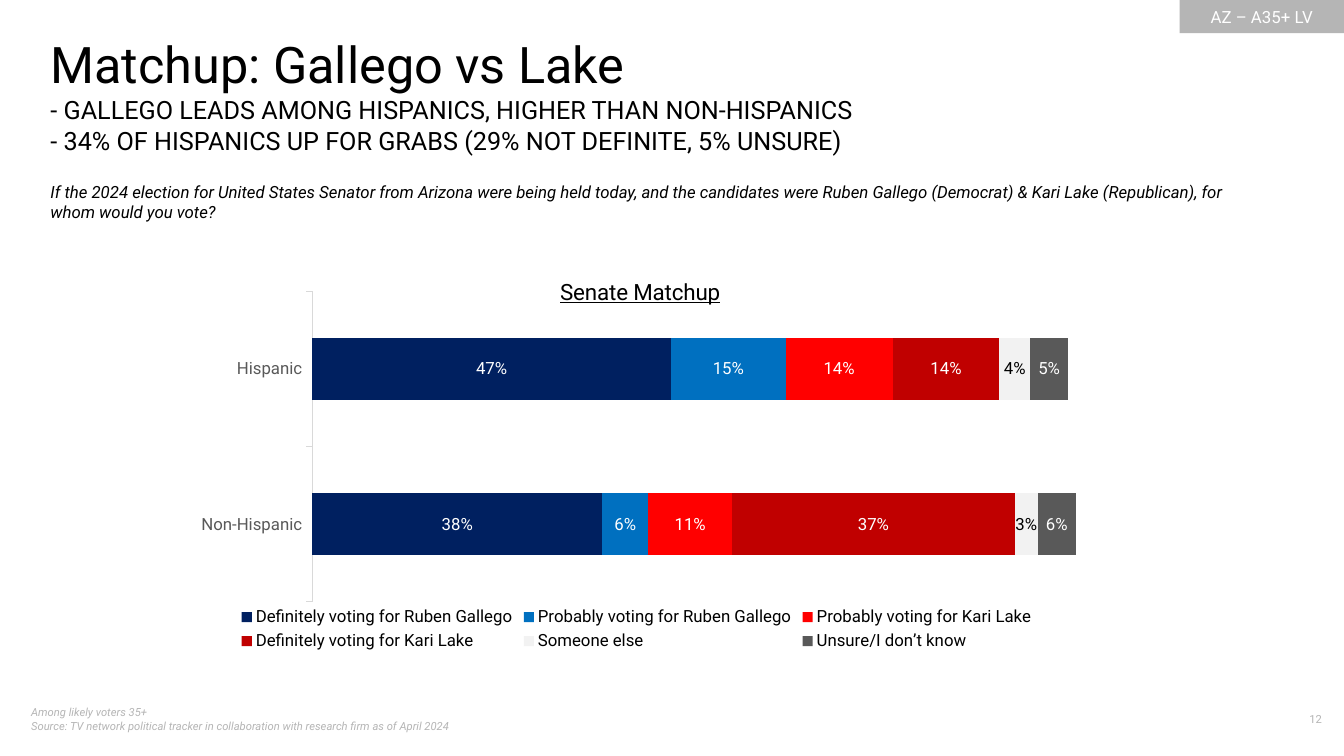
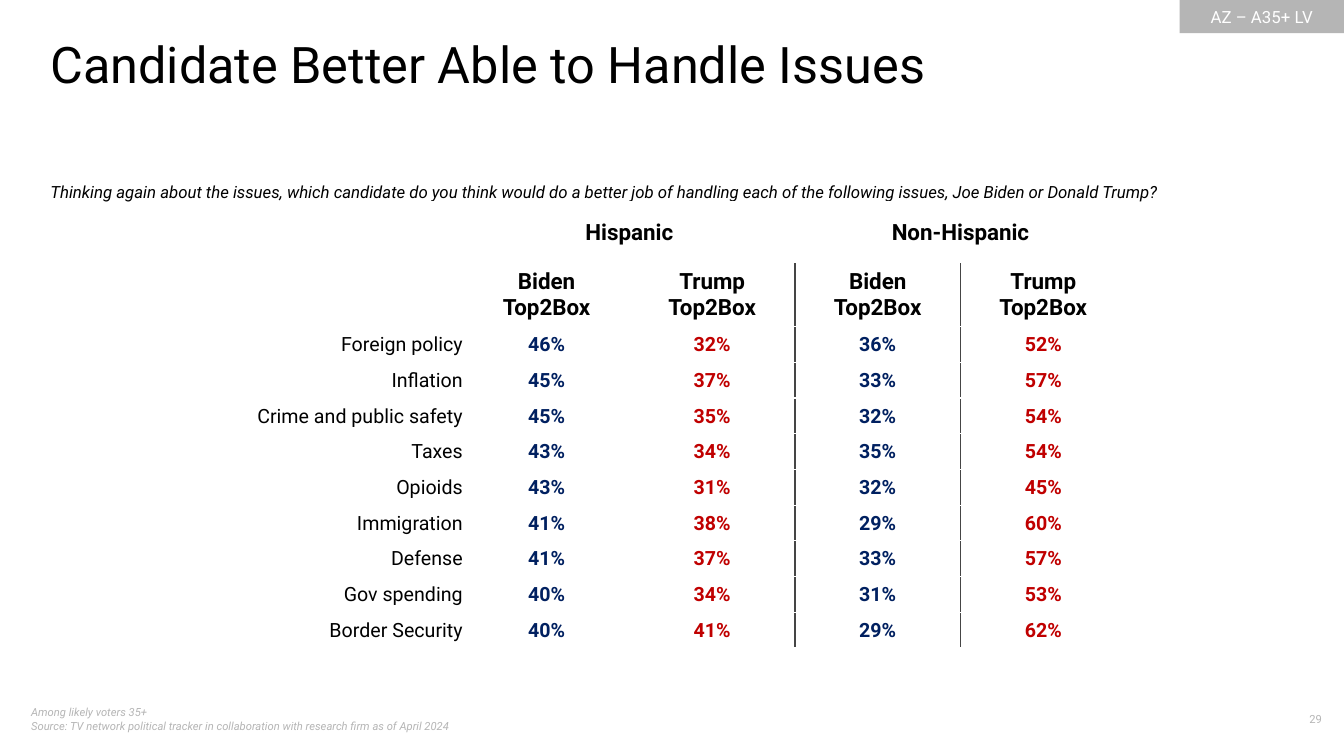
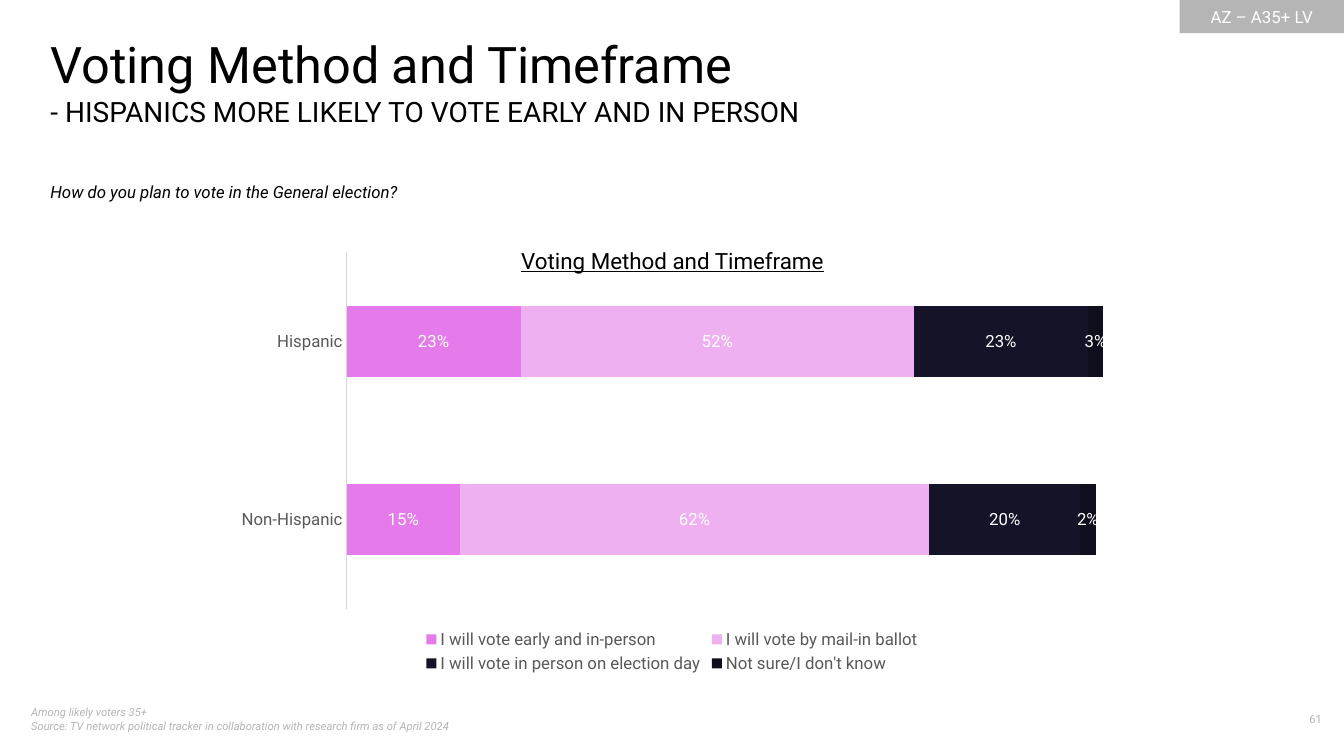
from dataclasses import dataclass
from typing import Optional

from lxml import etree
from pptx import Presentation
from pptx.chart.data import CategoryChartData
from pptx.dml.color import RGBColor
from pptx.enum.chart import XL_CHART_TYPE, XL_LABEL_POSITION, XL_LEGEND_POSITION, XL_TICK_MARK
from pptx.enum.shapes import MSO_SHAPE
from pptx.enum.text import MSO_ANCHOR, MSO_AUTO_SIZE, PP_ALIGN
from pptx.oxml.ns import qn
from pptx.util import Inches, Pt


@dataclass(frozen=True)
class Theme:
    font: str = "Roboto"
    # Colours
    ink: str = "000000"
    paper: str = "FFFFFF"
    muted: str = "B5B5B5"
    axis_text: str = "595959"
    axis_line: str = "D9D9D9"
    divider: str = "454545"
    navy: str = "002060"
    blue: str = "0070C0"
    red: str = "FF0000"
    dark_red: str = "C00000"
    pale: str = "F2F2F2"
    orchid: str = "E57BEA"
    light_orchid: str = "EFB0F2"
    midnight: str = "141327"
    near_black: str = "0F0E1D"
    # Type sizes
    title: int = 36
    heading: int = 16
    table: int = 14
    label: int = 12
    chart: int = 10
    small: int = 8


THEME = Theme()
BAND = "AZ – A35+ LV"
FOOTER = ("Among likely voters 35+\n"
          "Source: TV network political tracker in collaboration with research firm as of April 2024")
GROUPS = ("Hispanic", "Non-Hispanic")


@dataclass(frozen=True)
class Box:
    left: float
    top: float
    width: float
    height: float

    def lengths(self) -> tuple:
        return tuple(Inches(v) for v in (self.left, self.top, self.width, self.height))


@dataclass(frozen=True)
class Page:
    number: int
    title: str
    question: str
    findings: str = ""
    findings_size: int = 18


@dataclass(frozen=True)
class Answer:
    name: str
    shares: tuple
    color: str
    label_color: str = THEME.paper


@dataclass(frozen=True)
class StackedBars:
    box: Box
    plot: Box  # fractions of the chart area
    answers: tuple
    legend_color: str
    tick: XL_TICK_MARK
    title: Optional[str] = None


@dataclass(frozen=True)
class Issue:
    name: str
    shares: tuple  # Biden and Trump among Hispanics, then among Non-Hispanics


# Text helpers
def style_font(font, size: int, color: str, bold: bool = False,
               italic: bool = False, underline: bool = False) -> None:
    font.name, font.size = THEME.font, Pt(size)
    font.bold, font.italic, font.underline = bold, italic, underline
    font.color.rgb = RGBColor.from_string(color)


def write(frame, text: str, *, size: int, color: str = THEME.ink,
          align: PP_ALIGN = PP_ALIGN.LEFT, **font_format) -> None:
    frame.text = text
    for paragraph in frame.paragraphs:
        paragraph.alignment = align
        paragraph.space_before = Pt(0)
        for run in paragraph.runs:
            style_font(run.font, size, color, **font_format)


def fit_frame(frame, inset: Optional[float] = None, anchor: MSO_ANCHOR = MSO_ANCHOR.TOP) -> None:
    frame.word_wrap = True
    frame.auto_size = MSO_AUTO_SIZE.NONE
    frame.vertical_anchor = anchor
    if inset is not None:
        frame.margin_left = frame.margin_right = Inches(inset)
        frame.margin_top = frame.margin_bottom = Inches(inset)


def add_text(slide, box: Box, text: str, inset: Optional[float] = None,
             anchor: MSO_ANCHOR = MSO_ANCHOR.TOP, **text_format) -> None:
    frame = slide.shapes.add_textbox(*box.lengths()).text_frame
    fit_frame(frame, inset, anchor)
    write(frame, text, **text_format)


def fill_placeholder(placeholder, box: Box, text: str, size: int) -> None:
    placeholder.left, placeholder.top, placeholder.width, placeholder.height = box.lengths()
    fit_frame(placeholder.text_frame, inset=0)
    write(placeholder.text_frame, text, size=size)


# Shared page parts
def add_page(prs, page: Page):
    slide = prs.slides.add_slide(prs.slide_layouts[1])
    fill_placeholder(slide.shapes.title, Box(0.5, 0.33, 12, 0.61), page.title, THEME.title)
    body = slide.placeholders[1]
    if page.findings:
        fill_placeholder(body, Box(0.5, 0.94, 12, 0.7), page.findings, page.findings_size)
        for paragraph in body.text_frame.paragraphs:
            properties = paragraph._p.get_or_add_pPr()
            properties.set("marL", "0")
            properties.set("indent", "0")
            etree.SubElement(properties, qn("a:buNone"))
    else:
        body._element.getparent().remove(body._element)
    add_text(slide, Box(0.5, 1.8, 12, 0.4), page.question, inset=0, size=THEME.label, italic=True)

    band = slide.shapes.add_shape(MSO_SHAPE.RECTANGLE, *Box(11.7, 0, 1.63, 0.33).lengths())
    band.shadow.inherit = False
    band.fill.solid()
    band.fill.fore_color.rgb = RGBColor.from_string(THEME.muted)
    band.line.fill.background()
    fit_frame(band.text_frame, anchor=MSO_ANCHOR.MIDDLE)
    write(band.text_frame, BAND, size=THEME.label, color=THEME.paper, align=PP_ALIGN.CENTER)

    add_text(slide, Box(0.21, 6.95, 5.11, 0.4), FOOTER, size=THEME.small,
             color=THEME.muted, italic=True)
    add_text(slide, Box(12.33, 7.02, 0.88, 0.27), str(page.number), size=THEME.small,
             color=THEME.muted, align=PP_ALIGN.RIGHT)
    return slide


# Charts
def set_layout(parent, position: int, **settings) -> None:
    layout = parent.find(qn("c:layout"))
    if layout is None:
        layout = etree.Element(qn("c:layout"))
        parent.insert(position, layout)
    manual = etree.SubElement(layout, qn("c:manualLayout"))
    for tag, value in settings.items():
        etree.SubElement(manual, qn(f"c:{tag}")).set("val", str(value))


def add_bars(slide, bars: StackedBars) -> None:
    data = CategoryChartData(number_format="0%")
    data.categories = GROUPS
    for answer in bars.answers:
        data.add_series(answer.name, answer.shares)
    chart = slide.shapes.add_chart(XL_CHART_TYPE.BAR_STACKED, *bars.box.lengths(), data).chart
    style_font(chart.font, THEME.chart, THEME.ink)

    chart.has_title = bars.title is not None
    if bars.title:
        write(chart.chart_title.text_frame, bars.title, size=THEME.heading,
              align=PP_ALIGN.CENTER, underline=True)
        set_layout(chart.chart_title._element, 1, xMode="edge", yMode="edge", x=0.41, y=0.04)

    plot = chart.plots[0]
    plot.gap_width, plot.overlap, plot.vary_by_categories = 150, 100, False
    set_layout(plot._element.getparent(), 0, layoutTarget="inner", xMode="edge", yMode="edge",
               x=bars.plot.left, y=bars.plot.top, w=bars.plot.width, h=bars.plot.height)
    for series, answer in zip(plot.series, bars.answers):
        series.format.fill.solid()
        series.format.fill.fore_color.rgb = RGBColor.from_string(answer.color)
        labels = series.data_labels
        labels.show_value = True
        labels.position = XL_LABEL_POSITION.CENTER
        labels.number_format, labels.number_format_is_linked = "0%", False
        style_font(labels.font, THEME.label, answer.label_color)

    groups, scale = chart.category_axis, chart.value_axis
    groups.reverse_order = True
    groups.major_tick_mark, groups.minor_tick_mark = bars.tick, XL_TICK_MARK.NONE
    groups.format.line.color.rgb = RGBColor.from_string(THEME.axis_line)
    groups.format.line.width = Pt(0.75)
    style_font(groups.tick_labels.font, THEME.label, THEME.axis_text)
    scale.minimum_scale, scale.maximum_scale = 0, 1
    scale.has_major_gridlines = False
    scale.visible = False

    chart.has_legend = True
    chart.legend.position = XL_LEGEND_POSITION.BOTTOM
    chart.legend.include_in_layout = False
    style_font(chart.legend.font, THEME.label, bars.legend_color)


# Issue table
def add_border(cell, side: str) -> None:
    line = etree.Element(qn(f"a:{side}"), w=str(Pt(1.5)))
    fill = etree.SubElement(line, qn("a:solidFill"))
    etree.SubElement(fill, qn("a:srgbClr"), val=THEME.divider)
    cell._tc.get_or_add_tcPr().insert(0, line)


def add_issue_table(slide, issues: tuple) -> None:
    box = Box(2.17, 2, 9, 4.43)
    name_width, header_height = 2.43, 0.62
    candidates = ("Biden", "Trump")
    table = slide.shapes.add_table(len(issues) + 2, 5, *box.lengths()).table
    table.first_row = table.horz_banding = False
    for index, column in enumerate(table.columns):
        column.width = Inches(name_width if index == 0 else (box.width - name_width) / 4)
    for index, row in enumerate(table.rows):
        row.height = Inches(header_height if index < 2
                            else (box.height - 2 * header_height) / len(issues))
    for cell in table.iter_cells():
        cell.fill.background()
        cell.vertical_anchor = MSO_ANCHOR.MIDDLE

    for index, group in enumerate(GROUPS):
        first = 1 + 2 * index
        table.cell(0, first).merge(table.cell(0, first + 1))
        write(table.cell(0, first).text_frame, group, size=THEME.heading,
              bold=True, align=PP_ALIGN.CENTER)
    for column in range(1, 5):
        write(table.cell(1, column).text_frame, f"{candidates[(column - 1) % 2]} Top2Box",
              size=THEME.heading, bold=True, align=PP_ALIGN.CENTER)

    for row, issue in enumerate(issues, start=2):
        for column, value in enumerate((issue.name, *issue.shares)):
            cell = table.cell(row, column)
            cell.margin_left = cell.margin_right = cell.margin_top = Inches(0.01)
            cell.margin_bottom = 0
            if column == 0:
                write(cell.text_frame, value, size=THEME.table, align=PP_ALIGN.RIGHT)
            else:
                write(cell.text_frame, f"{value}%", size=THEME.table, bold=True,
                      color=THEME.navy if column % 2 else THEME.dark_red, align=PP_ALIGN.CENTER)

    # Divider between the two groups
    for row in range(1, len(issues) + 2):
        add_border(table.cell(row, 2), "lnR")
        add_border(table.cell(row, 3), "lnL")


# Content
MATCHUP = Page(
    12, "Matchup: Gallego vs Lake",
    "If the 2024 election for United States Senator from Arizona were being held today, and the "
    "candidates were Ruben Gallego (Democrat) & Kari Lake (Republican), for whom would you vote?",
    "- GALLEGO LEADS AMONG HISPANICS, HIGHER THAN NON-HISPANICS\n"
    "- 34% OF HISPANICS UP FOR GRABS (29% NOT DEFINITE, 5% UNSURE)")
MATCHUP_BARS = StackedBars(
    Box(1.87, 2.56, 8.89, 3.94), Box(0.138, 0.084, 0.852, 0.782),
    (Answer("Definitely voting for Ruben Gallego", (0.47, 0.38), THEME.navy),
     Answer("Probably voting for Ruben Gallego", (0.15, 0.06), THEME.blue),
     Answer("Probably voting for Kari Lake", (0.14, 0.11), THEME.red),
     Answer("Definitely voting for Kari Lake", (0.14, 0.37), THEME.dark_red),
     Answer("Someone else", (0.04, 0.03), THEME.pale, THEME.ink),
     Answer("Unsure/I don’t know", (0.05, 0.06), THEME.axis_text)),
    THEME.ink, XL_TICK_MARK.OUTSIDE, "Senate Matchup")

ISSUES_PAGE = Page(
    29, "Candidate Better Able to Handle Issues",
    "Thinking again about the issues, which candidate do you think would do a better job of "
    "handling each of the following issues, Joe Biden or Donald Trump?")
ISSUES = (
    Issue("Foreign policy", (46, 32, 36, 52)),
    Issue("Inflation", (45, 37, 33, 57)),
    Issue("Crime and public safety", (45, 35, 32, 54)),
    Issue("Taxes", (43, 34, 35, 54)),
    Issue("Opioids", (43, 31, 32, 45)),
    Issue("Immigration", (41, 38, 29, 60)),
    Issue("Defense", (41, 37, 33, 57)),
    Issue("Gov spending", (40, 34, 31, 53)),
    Issue("Border Security", (40, 41, 29, 62)),
)

VOTING = Page(
    61, "Voting Method and Timeframe", "How do you plan to vote in the General election?",
    "- HISPANICS MORE LIKELY TO VOTE EARLY AND IN PERSON", 20)
VOTING_BARS = StackedBars(
    Box(2.22, 2.42, 8.89, 4.3), Box(0.137, 0.019, 0.844, 0.823),
    (Answer("I will vote early and in-person", (0.23, 0.15), THEME.orchid),
     Answer("I will vote by mail-in ballot", (0.52, 0.62), THEME.light_orchid),
     Answer("I will vote in person on election day", (0.23, 0.2), THEME.midnight),
     Answer("Not sure/I don't know", (0.03, 0.02), THEME.near_black)),
    THEME.axis_text, XL_TICK_MARK.NONE)


def main() -> None:
    prs = Presentation()
    prs.slide_width, prs.slide_height = Inches(13.33), Inches(7.5)

    add_bars(add_page(prs, MATCHUP), MATCHUP_BARS)
    add_issue_table(add_page(prs, ISSUES_PAGE), ISSUES)

    voting = add_page(prs, VOTING)
    add_bars(voting, VOTING_BARS)
    add_text(voting, Box(4.2, 2.18, 4.94, 0.81), VOTING.title, anchor=MSO_ANCHOR.MIDDLE,
             size=THEME.heading, underline=True, align=PP_ALIGN.CENTER)

    prs.save("out.pptx")


if __name__ == "__main__":
    main()
